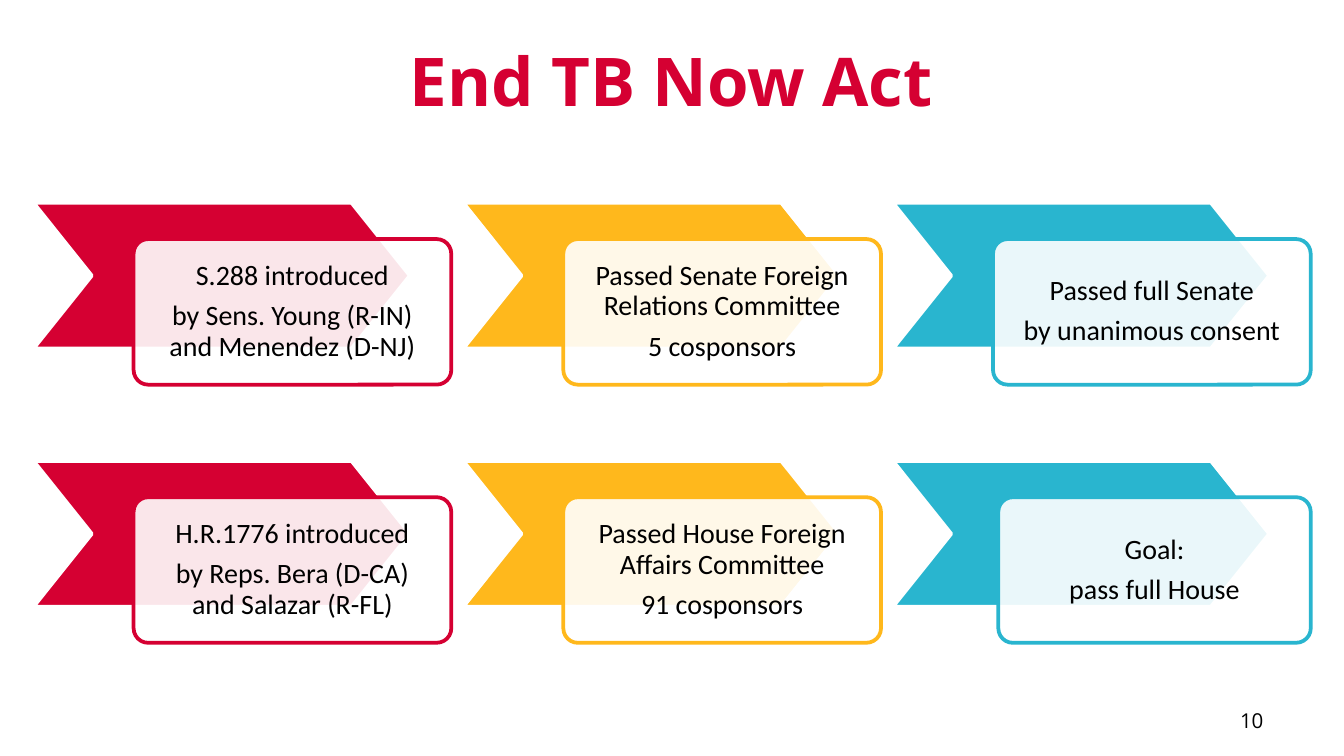
from lxml import etree
from pptx import Presentation
from pptx.dml.color import RGBColor
from pptx.enum.shapes import MSO_SHAPE
from pptx.enum.text import MSO_ANCHOR, PP_ALIGN
from pptx.oxml.ns import qn
from pptx.util import Pt

CHEVRON = MSO_SHAPE.CHEVRON
ROUND = MSO_SHAPE.ROUNDED_RECTANGLE
MIDDLE = MSO_ANCHOR.MIDDLE
CENTER = PP_ALIGN.CENTER
RIGHT = PP_ALIGN.RIGHT

RED = RGBColor(0xD5, 0x00, 0x32)
GOLD = RGBColor(0xFF, 0xB8, 0x1C)
TEAL = RGBColor(0x29, 0xB5, 0xCF)
WHITE = RGBColor(0xFF, 0xFF, 0xFF)
BLACK = RGBColor(0x00, 0x00, 0x00)
HUES = [RED, GOLD, TEAL]

LEFT, PITCH = 18, 230.2
WIDE, HIGH = 201.6, 78
DX, DY, CARD = 53.6, 19.4, 170.2

SENATE = [
    (["S.288 introduced", "by Sens. Young (R-IN) and Menendez (D-NJ)"], 0),
    (["Passed Senate Foreign Relations Committee", "5 cosponsors"], 0),
    (["Passed full Senate", "by unanimous consent"], 0),
]
HOUSE = [
    (["H.R.1776 introduced", "by Reps. Bera (D-CA) and Salazar (R-FL)"], 0),
    (["Passed House Foreign Affairs Committee", "91 cosponsors"], 0),
    (["Goal:", "pass full House"], 2.8),
]
TRACKS = [(108.7, SENATE), (247, HOUSE)]


def add_run(para, text, face, size, color, bold=False):
    """Add one styled run to a paragraph."""
    run = para.add_run()
    run.text = text
    run.font.name = face
    run.font.size = Pt(size)
    run.font.bold = bold
    run.font.color.rgb = color


def add_label(slide, box, text, align, size, color, bold=False):
    """Add a one-line text box."""
    frame = slide.shapes.add_textbox(*map(Pt, box)).text_frame
    frame.word_wrap = True
    frame.vertical_anchor = MIDDLE
    para = frame.paragraphs[0]
    para.alignment = align
    add_run(para, text, "Open Sans", size, color, bold)


def add_block(group, kind, box, adjust, fill, line):
    """Add a filled and outlined preset shape to a group."""
    shape = group.shapes.add_shape(kind, *map(Pt, box))
    shape.adjustments[0] = adjust
    shape.shadow.inherit = False
    shape.fill.solid()
    shape.fill.fore_color.rgb = fill
    shape.line.color.rgb = line
    shape.line.width = Pt(2)
    return shape


def add_card(group, box, lines, hue):
    """Add a slightly transparent card with centred text."""
    card = add_block(group, ROUND, box, 0.1, WHITE, hue)
    color = card.fill._xPr.find(qn("a:solidFill"))[0]
    etree.SubElement(color, qn("a:alpha"), val="90000")
    frame = card.text_frame
    frame.word_wrap = True
    frame.vertical_anchor = MIDDLE
    frame.margin_left = frame.margin_right = Pt(8.5)
    frame.margin_top = frame.margin_bottom = Pt(8.5)
    for i, text in enumerate(lines):
        para = frame.add_paragraph() if i else frame.paragraphs[0]
        para.alignment = CENTER
        para.line_spacing = 0.9
        para.space_after = Pt(5.25)
        add_run(para, text, "Calibri", 15, BLACK)


def add_track(slide, top, steps):
    """Add one row of chevrons with their cards."""
    group = slide.shapes.add_group_shape()
    for i, ((lines, trim), hue) in enumerate(zip(steps, HUES)):
        left = LEFT + i * PITCH
        add_block(group, CHEVRON, (left, top, WIDE, HIGH), 0.4, hue, WHITE)
        box = (left + DX + trim, top + DY, CARD - trim, HIGH)
        add_card(group, box, lines, hue)


def main():
    """Build and save the slide."""
    deck = Presentation()
    deck.slide_width, deck.slide_height = Pt(720), Pt(405)
    slide = deck.slides.add_slide(deck.slide_layouts[6])
    add_label(slide, (68.4, 8.6, 582.5, 67.7), "End TB Now Act", CENTER, 36, RED, True)
    add_label(slide, (516.2, 375.1, 167.8, 21.6), "10", RIGHT, 11, BLACK)
    for top, steps in TRACKS:
        add_track(slide, top, steps)
    deck.save("out.pptx")


if __name__ == "__main__":
    main()
